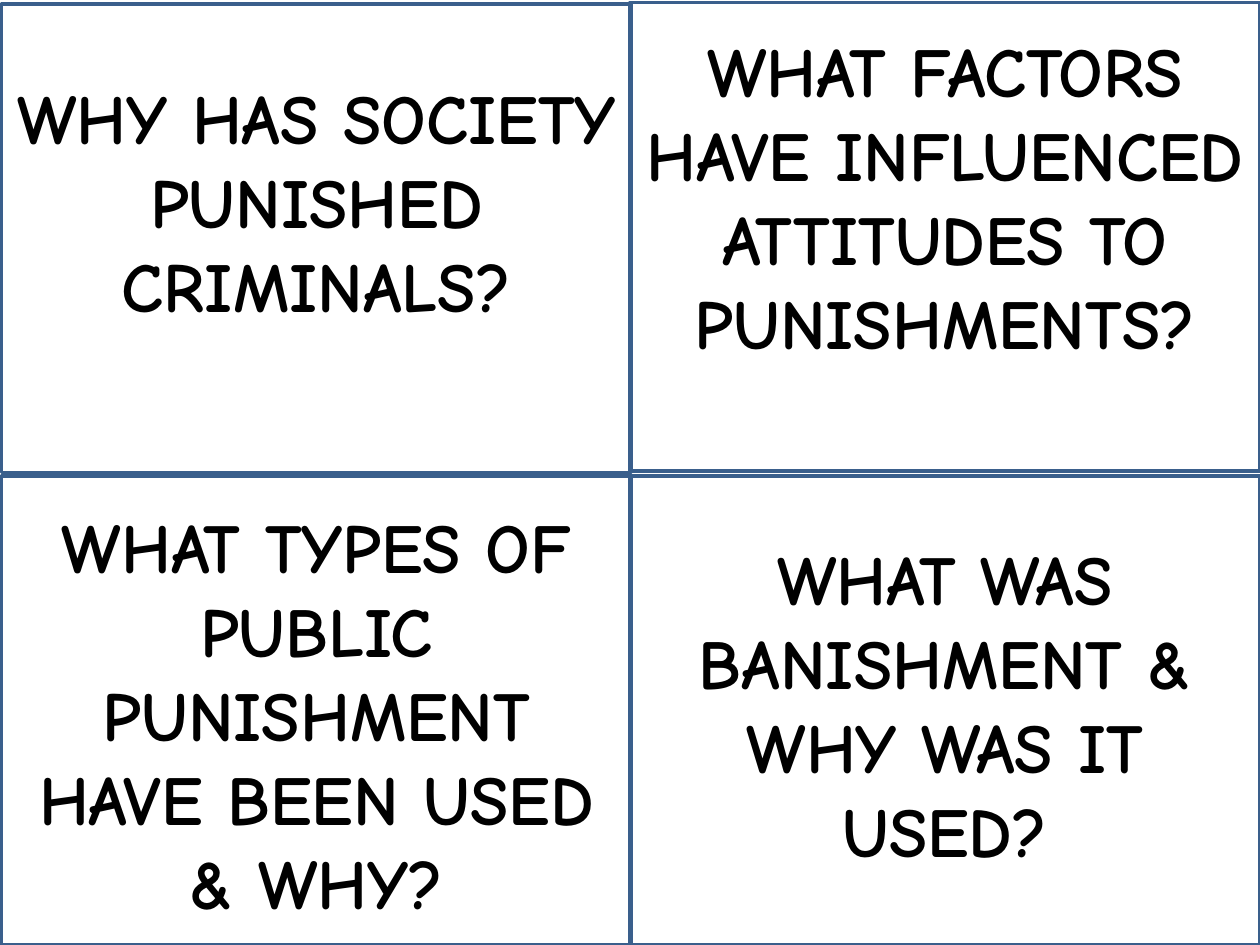
from pptx import Presentation
from pptx.dml.color import RGBColor
from pptx.enum.shapes import MSO_SHAPE
from pptx.enum.text import MSO_ANCHOR, MSO_AUTO_SIZE, PP_ALIGN
from pptx.util import Cm, Pt

RECTANGLE = MSO_SHAPE.RECTANGLE
TOP = MSO_ANCHOR.TOP
FIT_TEXT = MSO_AUTO_SIZE.SHAPE_TO_FIT_TEXT
CENTER = PP_ALIGN.CENTER

BORDER_BLUE = RGBColor(0x3A, 0x5F, 0x8C)
BLACK = RGBColor(0, 0, 0)
FONT = "Comic Neue"

CARD_WIDTH, CARD_HEIGHT = 12.7, 9.45
LEFT_COLUMN, RIGHT_COLUMN = 0.03, 12.7
BOTTOM_ROW = 9.6

# Card left, card top, question offset, question height (cm), question
CARDS = [
    (RIGHT_COLUMN, 0.05, 0.38, 8.81,
     "WHAT FACTORS HAVE INFLUENCED ATTITUDES TO PUNISHMENTS?"),
    (RIGHT_COLUMN, BOTTOM_ROW, 1.07, 7.09,
     "WHAT WAS BANISHMENT & WHY WAS IT USED?"),
    (LEFT_COLUMN, 0.08, 1.3, 7.09,
     "WHY HAS SOCIETY PUNISHED CRIMINALS?"),
    (LEFT_COLUMN, BOTTOM_ROW, 0.43, 8.81,
     "WHAT TYPES OF PUBLIC PUNISHMENT HAVE BEEN USED & WHY?"),
]


def add_border(slide, left, top):
    border = slide.shapes.add_shape(
        RECTANGLE, Cm(left), Cm(top), Cm(CARD_WIDTH), Cm(CARD_HEIGHT))
    border.shadow.inherit = False
    border.fill.background()
    border.line.color.rgb = BORDER_BLUE
    border.line.width = Pt(2)


def add_question(slide, left, top, height, question):
    box = slide.shapes.add_textbox(
        Cm(left), Cm(top), Cm(CARD_WIDTH), Cm(height))
    frame = box.text_frame
    frame.word_wrap = True
    frame.auto_size = FIT_TEXT
    frame.vertical_anchor = TOP
    paragraph = frame.paragraphs[0]
    paragraph.alignment = CENTER
    run = paragraph.add_run()
    run.text = question
    run.font.name = FONT
    run.font.size = Pt(40)
    run.font.bold = True
    run.font.color.rgb = BLACK


def main():
    deck = Presentation()
    deck.slide_width, deck.slide_height = Cm(25.4), Cm(19.05)
    slide = deck.slides.add_slide(deck.slide_layouts[6])

    # Card outlines lie behind all the questions
    for left, top, *_ in CARDS:
        add_border(slide, left, top)
    for left, top, offset, height, question in CARDS:
        add_question(slide, left, top + offset, height, question)

    deck.save("out.pptx")


if __name__ == "__main__":
    main()
